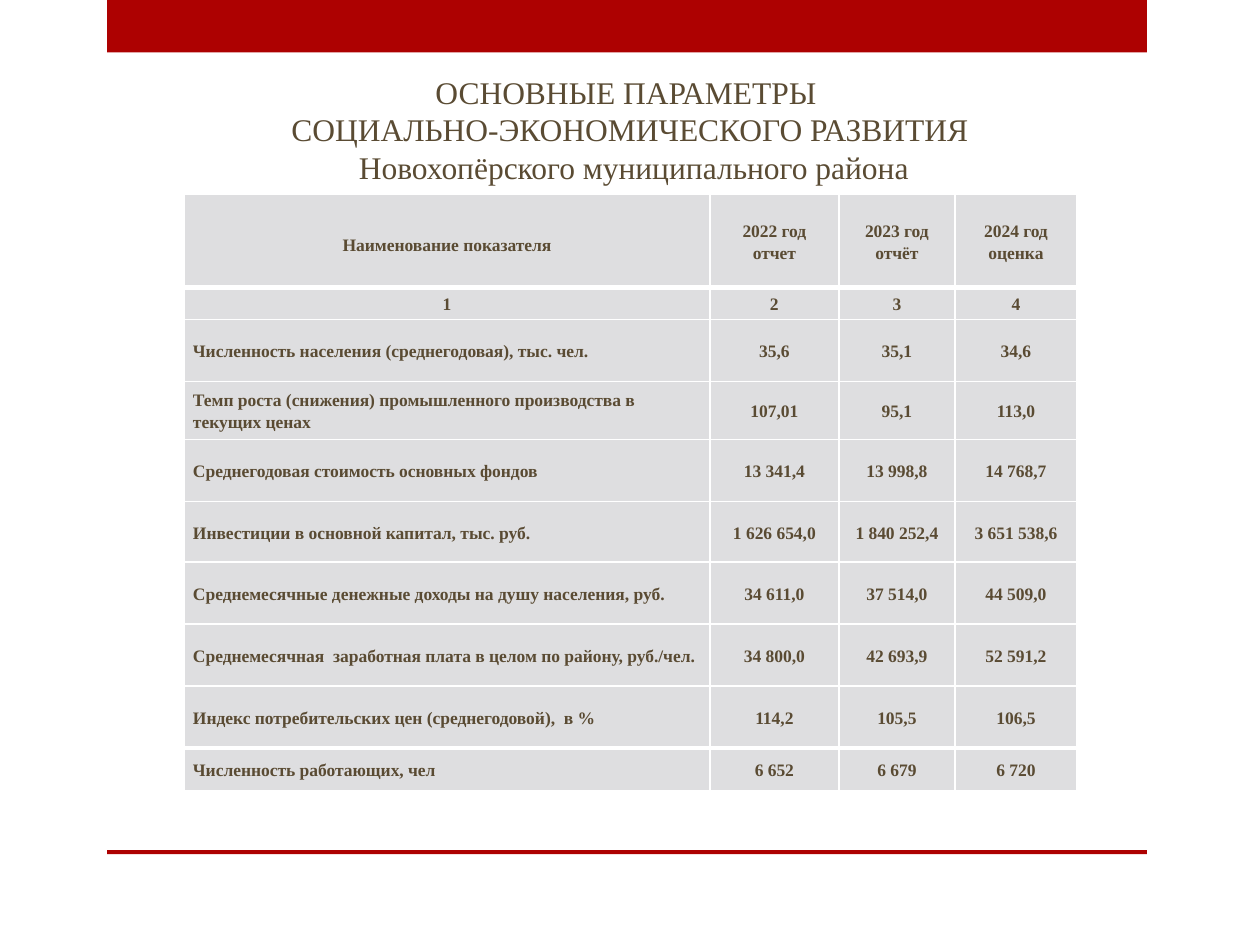
"""Builds a slide with the district's main social and economic indicators."""
from dataclasses import dataclass

from lxml.etree import SubElement
from pptx import Presentation
from pptx.dml.color import RGBColor
from pptx.enum.shapes import MSO_SHAPE
from pptx.enum.text import MSO_ANCHOR, PP_ALIGN
from pptx.oxml.ns import qn
from pptx.util import Cm, Pt


@dataclass(frozen=True)
class Theme:
    font: str = "Times New Roman"
    text: str = "5A4B33"
    accent: str = "AD0101"
    cell: str = "DEDEE0"
    border: str = "FFFFFF"
    title_size: int = 18
    table_size: int = 10
    thin: int = 1
    thick: int = 3


theme = Theme()


def add_span(para, text, size, bold=False):
    span = para.add_run()
    span.text = text
    span.font.name = theme.font
    span.font.size = Pt(size)
    span.font.bold = bold
    span.font.color.rgb = RGBColor.from_string(theme.text)


def set_border(cell, side, width):
    line = SubElement(cell._tc.get_or_add_tcPr(), qn(f"a:ln{side}"), w=str(Pt(width)))
    fill = SubElement(line, qn("a:solidFill"))
    SubElement(fill, qn("a:srgbClr"), val=theme.border)


TITLE_LINES = [
    "ОСНОВНЫЕ ПАРАМЕТРЫ ",
    "СОЦИАЛЬНО-ЭКОНОМИЧЕСКОГО РАЗВИТИЯ",
    " Новохопёрского муниципального района",
]
COLUMN_WIDTHS = [10.6, 2.6, 2.34, 2.46]
ROWS = [
    (1.88, "Наименование показателя", "2022 год отчет", "2023 год отчёт", "2024 год оценка"),
    (0.64, "1", "2", "3", "4"),
    (1.25, "Численность населения (среднегодовая), тыс. чел.", "35,6", "35,1", "34,6"),
    (1.17, "Темп роста (снижения) промышленного производства в текущих ценах",
     "107,01", "95,1", "113,0"),
    (1.25, "Среднегодовая стоимость основных фондов", "13 341,4", "13 998,8", "14 768,7"),
    (1.22, "Инвестиции в основной капитал, тыс. руб.",
     "1 626 654,0", "1 840 252,4", "3 651 538,6"),
    (1.25, "Среднемесячные денежные доходы на душу населения, руб.",
     "34 611,0", "37 514,0", "44 509,0"),
    (1.25, "Среднемесячная  заработная плата в целом по району, руб./чел.",
     "34 800,0", "42 693,9", "52 591,2"),
    (1.25, "Индекс потребительских цен (среднегодовой),  в %", "114,2", "105,5", "106,5"),
    (0.86, "Численность работающих, чел", "6 652", "6 679", "6 720"),
]

deck = Presentation()
deck.slide_width, deck.slide_height = Cm(25.4), Cm(19.05)
page = deck.slides.add_slide(deck.slide_layouts[5])

for top, height in [(0, 1.06), (17.14, 0.08)]:
    band = page.shapes.add_shape(MSO_SHAPE.RECTANGLE, Cm(2.16), Cm(top), Cm(20.96), Cm(height))
    band.shadow.inherit = False
    band.fill.solid()
    band.fill.fore_color.rgb = RGBColor.from_string(theme.accent)
    band.line.fill.background()

title = page.shapes.title
title.left, title.top, title.width, title.height = Cm(1.19), Cm(1.32), Cm(23.02), Cm(2.57)
frame = title.text_frame
frame.word_wrap = True
frame.vertical_anchor = MSO_ANCHOR.MIDDLE
for index, text in enumerate(TITLE_LINES):
    para = frame.add_paragraph() if index else frame.paragraphs[0]
    para.alignment = PP_ALIGN.CENTER
    add_span(para, text, theme.title_size)

table = page.shapes.add_table(
    len(ROWS), len(COLUMN_WIDTHS), Cm(3.71), Cm(3.92),
    Cm(sum(COLUMN_WIDTHS)), Cm(sum(row[0] for row in ROWS)),
).table
for column, width in zip(table.columns, COLUMN_WIDTHS):
    column.width = Cm(width)

last_row = len(ROWS) - 1
for row_index, (height, *texts) in enumerate(ROWS):
    table.rows[row_index].height = Cm(height)
    top_width = theme.thick if row_index in (1, last_row) else theme.thin
    bottom_width = theme.thick if row_index in (0, last_row - 1) else theme.thin
    for column_index, text in enumerate(texts):
        cell = table.cell(row_index, column_index)
        cell.margin_left = cell.margin_right = Cm(0.18)
        cell.margin_top = cell.margin_bottom = Cm(0)
        cell.vertical_anchor = MSO_ANCHOR.MIDDLE
        for side, width in zip("LRTB", (theme.thin, theme.thin, top_width, bottom_width)):
            set_border(cell, side, width)
        cell.fill.solid()
        cell.fill.fore_color.rgb = RGBColor.from_string(theme.cell)
        is_label = column_index == 0 and row_index > 1
        para = cell.text_frame.paragraphs[0]
        para.alignment = PP_ALIGN.LEFT if is_label else PP_ALIGN.CENTER
        para.line_spacing = 1.5 if row_index == column_index == 0 else 1.15
        add_span(para, text, theme.table_size, bold=True)

deck.save("out.pptx")
